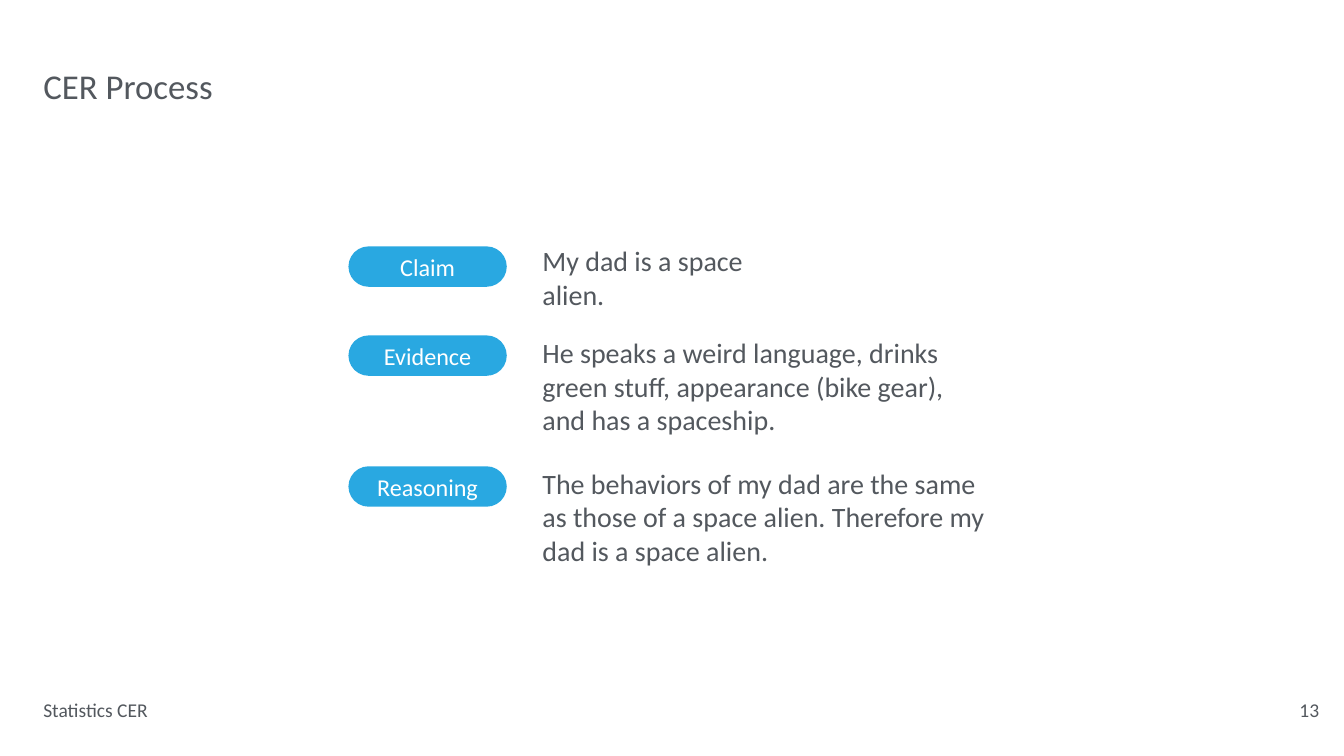
from pptx import Presentation
from pptx.dml.color import RGBColor
from pptx.enum.shapes import MSO_SHAPE
from pptx.enum.text import MSO_ANCHOR, MSO_AUTO_SIZE, PP_ALIGN
from pptx.util import Cm, Pt

FONT = "Calibri"
GREY, BLUE, WHITE = "53585E", "29A8E1", "FFFFFF"
TITLE = "CER Process"
STEPS = [
    ("Claim", "My dad is a space alien.", 10.24, 10.14, 11),
    ("Evidence", "He speaks a weird language, drinks green stuff, "
     "appearance (bike gear), and has a spaceship.", 13.94, 13.95, 18.49),
    ("Reasoning", "The behaviors of my dad are the same as those of a space alien. "
     "Therefore my dad is a space alien.", 19.38, 19.38, 18.72),
]
FOOTERS = [("Statistics CER", 1.8, 4.8), ("13", 54, 1)]
PILL_LEFT, PILL_WIDTH, PILL_HEIGHT = 14.48, 6.58, 1.68
STEP_TEXT_LEFT, STEP_TEXT_HEIGHT = 22.54, 4.2
FOOTER_TOP, FOOTER_HEIGHT = 29.03, 1


def color(value):
    return RGBColor.from_string(value)


def write(sp, text, size, ink=GREY, align=PP_ALIGN.LEFT, anchor=MSO_ANCHOR.TOP):
    tf = sp.text_frame
    tf.text = text
    tf.word_wrap = True
    tf.auto_size = MSO_AUTO_SIZE.NONE
    tf.vertical_anchor = anchor
    tf.margin_left = tf.margin_right = tf.margin_top = tf.margin_bottom = 0
    p = tf.paragraphs[0]
    p.alignment = align
    font = p.runs[0].font
    font.name, font.size, font.color.rgb = FONT, Pt(size), color(ink)


def add_text(s, text, size, *box):
    write(s.shapes.add_textbox(*map(Cm, box)), text, size)


def add_pill(s, label, top):
    sp = s.shapes.add_shape(MSO_SHAPE.ROUNDED_RECTANGLE, Cm(PILL_LEFT), Cm(top),
                            Cm(PILL_WIDTH), Cm(PILL_HEIGHT))
    sp.adjustments[0] = 0.5
    sp.shadow.inherit = False
    sp.fill.solid()
    sp.fill.fore_color.rgb = color(BLUE)
    sp.line.fill.background()
    write(sp, label, 28.5, WHITE, PP_ALIGN.CENTER, MSO_ANCHOR.MIDDLE)


def main():
    prs = Presentation()
    prs.slide_width, prs.slide_height = Cm(55.85), Cm(31.42)
    s = prs.slides.add_slide(prs.slide_layouts[5])

    title = s.shapes.title
    title.left, title.top, title.width, title.height = map(Cm, (1.8, 2.69, 24.9, 1.8))
    write(title, TITLE, 41)

    for label, text, pill_top, text_top, width in STEPS:
        add_pill(s, label, pill_top)
        add_text(s, text, 33, STEP_TEXT_LEFT, text_top, width, STEP_TEXT_HEIGHT)

    for text, left, width in FOOTERS:
        add_text(s, text, 23, left, FOOTER_TOP, width, FOOTER_HEIGHT)

    prs.save("out.pptx")


if __name__ == "__main__":
    main()
